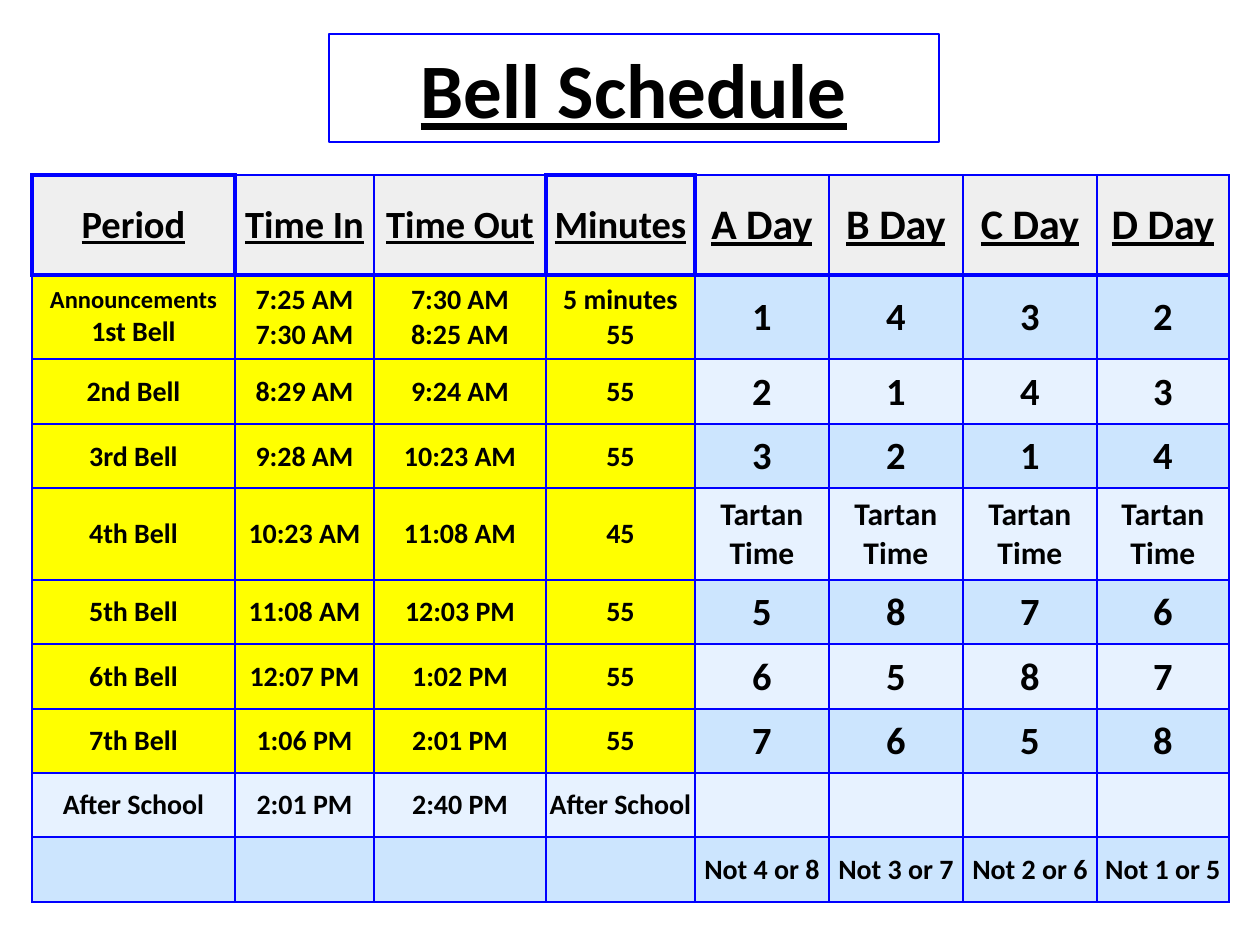
from lxml.etree import SubElement
from pptx import Presentation
from pptx.dml.color import RGBColor
from pptx.enum.text import MSO_ANCHOR, PP_ALIGN
from pptx.oxml.ns import qn
from pptx.util import Pt

EMU_PER_PX = 914400 / 126
BLUE = RGBColor(0x00, 0x00, 0xFF)
BLACK = RGBColor(0x00, 0x00, 0x00)
GRAY = RGBColor(0xEF, 0xEF, 0xEF)
YELLOW = RGBColor(0xFF, 0xFF, 0x00)
SKY = RGBColor(0xCC, 0xE5, 0xFE)
PALE = RGBColor(0xE7, 0xF2, 0xFF)

COLUMNS = [203, 139, 172, 149, 134, 134, 134, 132]
ROWS = [100, 84, 65, 64, 92, 64, 65, 64, 64, 65]
BOXED = (0, 3)
TARTAN = "Tartan\nTime"
SCHEDULE = [
    ["Period", "Time In", "Time Out", "Minutes", "A Day", "B Day", "C Day", "D Day"],
    ["Announcements\n1st Bell", "7:25 AM\n7:30 AM", "7:30 AM\n8:25 AM", "5 minutes\n55", "1", "4", "3", "2"],
    ["2nd Bell", "8:29 AM", "9:24 AM", "55", "2", "1", "4", "3"],
    ["3rd Bell", "9:28 AM", "10:23 AM", "55", "3", "2", "1", "4"],
    ["4th Bell", "10:23 AM", "11:08 AM", "45"] + [TARTAN] * 4,
    ["5th Bell", "11:08 AM", "12:03 PM", "55", "5", "8", "7", "6"],
    ["6th Bell", "12:07 PM", "1:02 PM", "55", "6", "5", "8", "7"],
    ["7th Bell", "1:06 PM", "2:01 PM", "55", "7", "6", "5", "8"],
    ["After School", "2:01 PM", "2:40 PM", "After School", "", "", "", ""],
    ["", "", "", "", "Not 4 or 8", "Not 3 or 7", "Not 2 or 6", "Not 1 or 5"],
]


def px(length):
    """Turn pixels into EMU."""
    return round(length * EMU_PER_PX)


def text_size(row, column, line):
    """Give the point size of one line in a schedule cell."""
    if row == 0:
        return 22 if column < 4 else 24
    if line == "Announcements":
        return 14
    if line in TARTAN.split("\n"):
        return 18
    return 22 if len(line) == 1 else 16


def cell_fill(row, column):
    """Give the fill colour of one schedule cell."""
    if row == 0:
        return GRAY
    if column < 4 and row < 8:
        return YELLOW
    return SKY if row % 2 else PALE


def border_widths(row, column):
    """Give the left, right, top and bottom border widths in points."""
    boxed = column in BOXED
    rule = 2.25 if boxed else 3
    if row == 0:
        left = 2.25 if boxed or column - 1 in BOXED else 1
        right = 2.25 if boxed or column + 1 in BOXED else 1
        return left, right, 2.25 if boxed else 1, rule
    return 1, 1, rule if row == 1 else 1, 1


class BellSlide:
    """Hold the text style and the current slide."""

    def __init__(self, slide, font="Calibri", ink=BLACK, accent=BLUE):
        """Keep the slide and its style."""
        self.slide, self.font, self.ink, self.accent = slide, font, ink, accent

    def add_text(self, paragraph, text, size, underline):
        """Add one centred bold run."""
        paragraph.alignment = PP_ALIGN.CENTER
        run = paragraph.add_run()
        run.text = text
        run.font.name, run.font.size = self.font, Pt(size)
        run.font.bold, run.font.underline = True, underline
        run.font.color.rgb = self.ink

    def title(self, text, left, top, width, height):
        """Add the outlined heading."""
        heading = self.slide.shapes.add_textbox(px(left), px(top), px(width), px(height))
        heading.line.color.rgb = self.accent
        heading.line.width = Pt(0.75)
        frame = heading.text_frame
        frame.word_wrap = True
        frame.vertical_anchor = MSO_ANCHOR.MIDDLE
        self.add_text(frame.paragraphs[0], text, 44, True)

    def borders(self, cell, widths):
        """Draw the four sides of a cell."""
        properties = cell._tc.get_or_add_tcPr()
        for side, width in zip("LRTB", widths):
            line = SubElement(properties, qn(f"a:ln{side}"), w=str(int(Pt(width))))
            fill = SubElement(line, qn("a:solidFill"))
            SubElement(fill, qn("a:srgbClr"), val=str(self.accent))

    def cell(self, cell, text, row, column):
        """Style and fill in one schedule cell."""
        cell.margin_left = cell.margin_right = cell.margin_top = px(1)
        cell.margin_bottom = 0
        cell.vertical_anchor = MSO_ANCHOR.MIDDLE
        self.borders(cell, border_widths(row, column))
        cell.fill.solid()
        cell.fill.fore_color.rgb = cell_fill(row, column)
        frame = cell.text_frame
        for index, line in enumerate(text.split("\n") if text else []):
            paragraph = frame.add_paragraph() if index else frame.paragraphs[0]
            self.add_text(paragraph, line, text_size(row, column, line), row == 0)

    def table(self, content, left, top, columns, rows):
        """Add the schedule grid."""
        grid = self.slide.shapes.add_table(
            len(rows), len(columns), px(left), px(top), px(sum(columns)), px(sum(rows))
        ).table
        grid.first_row = grid.horz_banding = False
        for column, width in zip(grid.columns, columns):
            column.width = px(width)
        for row, height in zip(grid.rows, rows):
            row.height = px(height)
        for row, texts in enumerate(content):
            for column, text in enumerate(texts):
                self.cell(grid.cell(row, column), text, row, column)


def main():
    """Build and save the bell schedule."""
    deck = Presentation()
    deck.slide_width, deck.slide_height = px(1260), px(945)
    page = BellSlide(deck.slides.add_slide(deck.slide_layouts[6]))
    page.table(SCHEDULE, 32, 175, COLUMNS, ROWS)
    page.title("Bell Schedule", 329, 34, 610, 108)
    deck.save("out.pptx")


if __name__ == "__main__":
    main()
